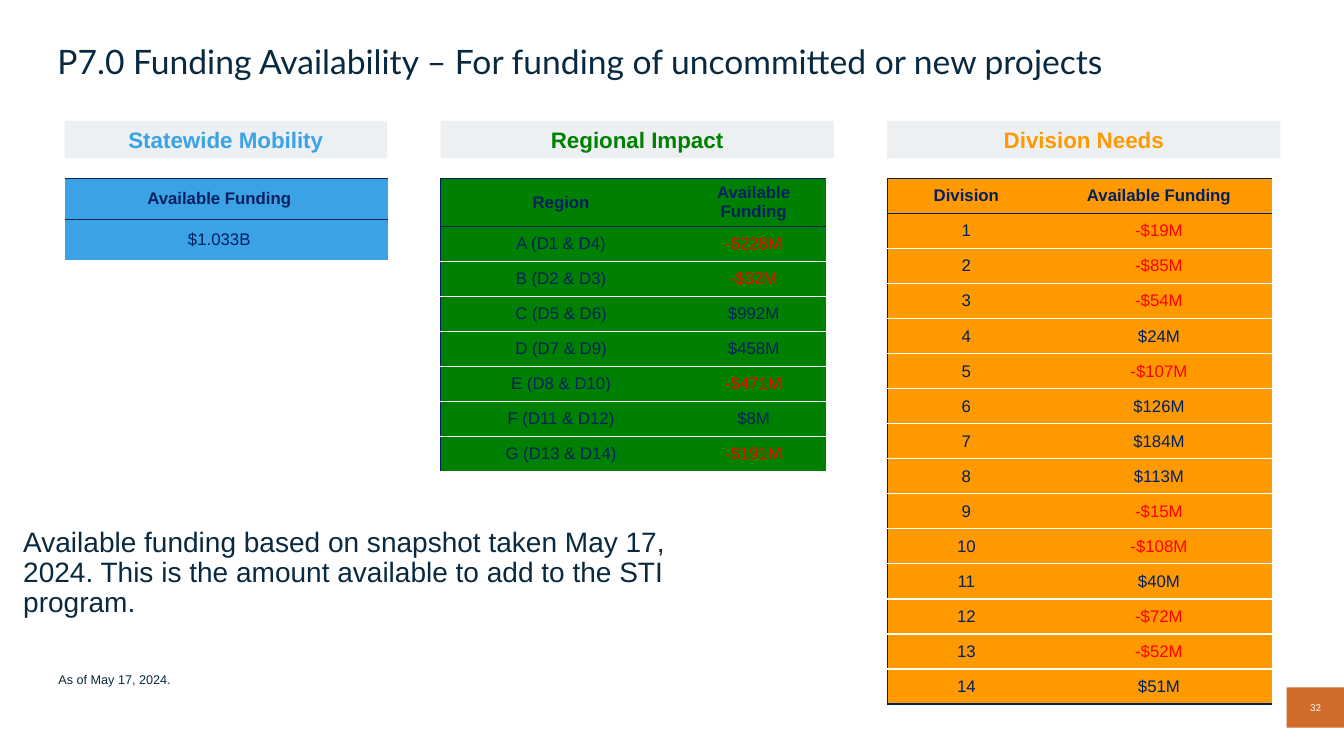
from lxml.etree import SubElement
from pptx import Presentation
from pptx.dml.color import RGBColor
from pptx.enum.shapes import MSO_SHAPE as Shape
from pptx.enum.text import MSO_ANCHOR as Anchor, MSO_AUTO_SIZE as Fit, PP_ALIGN as Align
from pptx.oxml.ns import qn
from pptx.util import Inches, Pt

NAVY, INK, RED, WHITE = "002060", "082940", "FF0000", "FFFFFF"
BLUE, GREEN, AMBER = "3CA2E6", "008000", "FF9900"
GRAY, RUST = "ECF0F3", "D16B2B"

REGIONS = [
    ("Region", "Available Funding"),
    ("A (D1 & D4)", "-$228M"),
    ("B (D2 & D3)", "-$32M"),
    ("C (D5 & D6)", "$992M"),
    ("D (D7 & D9)", "$458M"),
    ("E (D8 & D10)", "-$471M"),
    ("F (D11 & D12)", "$8M"),
    ("G (D13 & D14)", "-$191M"),
]
FUNDS = ["-$19M", "-$85M", "-$54M", "$24M", "-$107M", "$126M", "$184M",
         "$113M", "-$15M", "-$108M", "$40M", "-$72M", "-$52M", "$51M"]
NEEDS = [("Division", "Available Funding")]
NEEDS += [(str(num), fund) for num, fund in enumerate(FUNDS, 1)]


def color(code):
    return RGBColor.from_string(code)


def write(frame, text, size, code, bold=False, font="Arial", align=Align.CENTER):
    frame.text = text
    for para in frame.paragraphs:
        para.alignment = align
        for run in para.runs:
            run.font.size = Pt(size)
            run.font.name = font
            run.font.bold = bold
            run.font.color.rgb = color(code)


def fill_holder(holder, box, text, size, font="Arial", anchor=Anchor.TOP, before=0):
    holder.left, holder.top, holder.width, holder.height = map(Inches, box)
    frame = holder.text_frame
    write(frame, text, size, INK, font=font, align=Align.LEFT)
    frame.word_wrap = True
    frame.auto_size = Fit.NONE
    frame.vertical_anchor = anchor
    para = frame.paragraphs[0]
    para.line_spacing = 0.9
    para.space_before = Pt(before)
    props = para._p.get_or_add_pPr()
    props.set("marL", "0")
    props.set("indent", "0")
    SubElement(props, qn("a:buNone"))


def add_bar(slide, box, text, size, code, back, bold=True, font="Arial"):
    bar = slide.shapes.add_shape(Shape.RECTANGLE, *map(Inches, box))
    bar.shadow.inherit = False
    bar.fill.solid()
    bar.fill.fore_color.rgb = color(back)
    bar.line.fill.background()
    bar.text_frame.vertical_anchor = Anchor.MIDDLE
    write(bar.text_frame, text, size, code, bold, font)


def set_edge(cell, side, code):
    line = SubElement(cell._tc.get_or_add_tcPr(), qn("a:ln" + side), w=str(Pt(1)))
    if code:
        solid = SubElement(line, qn("a:solidFill"))
        SubElement(solid, qn("a:srgbClr"), val=code)
    else:
        SubElement(line, qn("a:noFill"))


def add_grid(slide, left, height, widths, rows, back, side=NAVY, foot=WHITE):
    frame = slide.shapes.add_table(
        len(rows), len(widths), Inches(left), Inches(1.77),
        Inches(sum(widths)), Inches(height))
    table = frame.table
    table.first_row = table.horz_banding = False
    for col, width in zip(table.columns, widths):
        col.width = Inches(width)
    last = len(rows) - 1
    for i, row in enumerate(rows):
        for j, text in enumerate(row):
            cell = table.cell(i, j)
            set_edge(cell, "L", side if j == 0 else None)
            set_edge(cell, "R", None)
            set_edge(cell, "T", NAVY if i < 2 else WHITE)
            set_edge(cell, "B", NAVY if i == 0 else foot if i == last else WHITE)
            cell.fill.solid()
            cell.fill.fore_color.rgb = color(back)
            cell.vertical_anchor = Anchor.MIDDLE
            cell.margin_left = cell.margin_right = Inches(0.05)
            cell.margin_top = cell.margin_bottom = Inches(0.05)
            code = RED if text.startswith("-") else NAVY
            write(cell.text_frame, text, 12, code, bold=i == 0)


def main():
    deck = Presentation()
    deck.slide_width, deck.slide_height = Inches(13.33), Inches(7.5)
    slide = deck.slides.add_slide(deck.slide_layouts[3])
    title, date, note = slide.placeholders

    fill_holder(title, (0.47, 0.48, 12.29, 0.31),
                "P7.0 Funding Availability – For funding of uncommitted or new projects",
                24, "Lato", Anchor.MIDDLE)
    fill_holder(date, (0.48, 6.63, 7.59, 0.4), "As of May 17, 2024.", 9, before=7.5)
    fill_holder(note, (0.13, 5.19, 7.28, 1.35),
                "Available funding based on snapshot taken May 17, 2024. "
                "This is the amount available to add to the STI program.",
                20, before=7.5)

    for left, width, text, code in [(0.64, 3.2, "Statewide Mobility", BLUE),
                                    (4.37, 3.9, "Regional Impact", GREEN),
                                    (8.8, 3.9, "Division Needs", AMBER)]:
        add_bar(slide, (left, 1.2, width, 0.37), text, 16, code, GRAY)

    state = [("Available Funding", ""), ("$1.033B", "")]
    add_grid(slide, 0.64, 0.7, (3.07, 0.13), state, BLUE, side=None)
    add_grid(slide, 4.37, 2.78, (2.39, 1.43), REGIONS, GREEN)
    add_grid(slide, 8.8, 5.22, (1.57, 2.25), NEEDS, AMBER, foot=NAVY)

    add_bar(slide, (12.76, 6.82, 0.58, 0.4), "32", 6.8, WHITE, RUST, False, "Lato")
    deck.save("out.pptx")


if __name__ == "__main__":
    main()
